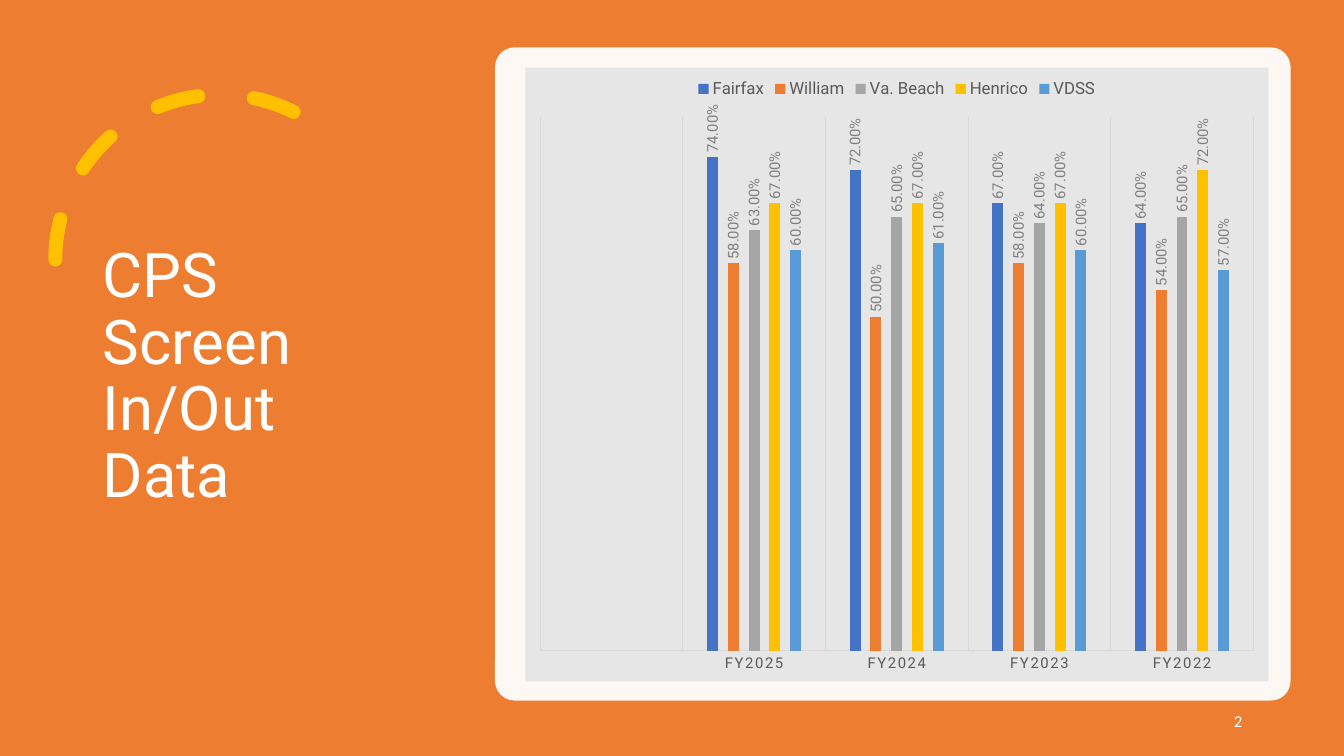
from dataclasses import dataclass

from lxml import etree
from pptx import Presentation
from pptx.chart.chart import Chart
from pptx.chart.data import CategoryChartData
from pptx.dml.color import RGBColor
from pptx.enum.chart import XL_CHART_TYPE, XL_LABEL_POSITION, XL_LEGEND_POSITION, XL_TICK_MARK
from pptx.enum.dml import MSO_LINE
from pptx.enum.shapes import MSO_SHAPE
from pptx.enum.text import MSO_ANCHOR, PP_ALIGN
from pptx.oxml import parse_xml
from pptx.oxml.ns import nsdecls, qn
from pptx.shapes.autoshape import Shape
from pptx.slide import Slide
from pptx.util import Inches, Pt

CLUSTERED = XL_CHART_TYPE.COLUMN_CLUSTERED
OUTSIDE_END = XL_LABEL_POSITION.OUTSIDE_END
LEGEND_TOP = XL_LEGEND_POSITION.TOP
NO_TICK = XL_TICK_MARK.NONE
DASH = MSO_LINE.DASH
RECTANGLE = MSO_SHAPE.RECTANGLE
ROUNDED = MSO_SHAPE.ROUNDED_RECTANGLE
ARC = MSO_SHAPE.ARC
MIDDLE = MSO_ANCHOR.MIDDLE
LEFT = PP_ALIGN.LEFT
RIGHT = PP_ALIGN.RIGHT

COLORS = {
    "orange": "ED7D31", "gold": "FFC000", "white": "FFFFFF", "blue": "4472C4",
    "gray": "A5A5A5", "sky": "5B9BD5", "panel": "E7E6E6", "grid": "D9D9D9",
    "axis_text": "595959", "label_text": "808080", "black": "000000",
}
FONT = "Roboto"
PERCENT = "0.00%"
YEARS = ["", "FY2025", "FY2024", "FY2023", "FY2022"]


@dataclass(frozen=True)
class Box:
    left: float
    top: float
    width: float
    height: float

    def lengths(self) -> list[int]:
        return [Inches(side) for side in (self.left, self.top, self.width, self.height)]


@dataclass(frozen=True)
class Agency:
    name: str
    color: str
    rates: list[float]


@dataclass(frozen=True)
class Caption:
    text: str
    box: Box
    size: float
    font: str
    alignment: PP_ALIGN
    line_spacing: float


AGENCIES = [
    Agency("Fairfax", "blue", [0.74, 0.72, 0.67, 0.64]),
    Agency("William", "orange", [0.58, 0.50, 0.58, 0.54]),
    Agency("Va. Beach", "gray", [0.63, 0.65, 0.64, 0.65]),
    Agency("Henrico", "gold", [0.67, 0.67, 0.67, 0.72]),
    Agency("VDSS", "sky", [0.60, 0.61, 0.60, 0.57]),
]
CAPTIONS = [
    Caption("CPS Screen In/Out Data", Box(0.92, 0.7, 3.23, 6.09), 44, FONT, LEFT, 0.9),
    Caption("2", Box(9.42, 6.95, 3, 0.4), 12, "Calibri", RIGHT, 1.0),
]


def rgb(name: str) -> RGBColor:
    return RGBColor.from_string(COLORS[name])


def style_font(font, size: float, color: str, name: str = FONT) -> None:
    font.size = Pt(size)
    font.name = name
    font.color.rgb = rgb(color)


def add_panel(slide: Slide, kind: MSO_SHAPE, box: Box, color: str) -> Shape:
    """Add a filled shape with no outline."""
    shape = slide.shapes.add_shape(kind, *box.lengths())
    shape.shadow.inherit = False
    shape.fill.solid()
    shape.fill.fore_color.rgb = rgb(color)
    shape.line.fill.background()
    return shape


def add_card(slide: Slide) -> None:
    card = add_panel(slide, ROUNDED, Box(4.91, 0.47, 7.89, 6.48), "white")
    card.adjustments[0] = 0.03
    fill_color = card.element.spPr.find(f"{qn('a:solidFill')}/{qn('a:srgbClr')}")
    etree.SubElement(fill_color, qn("a:alpha"), val="95000")


def add_dashed_arc(slide: Slide) -> None:
    arc = slide.shapes.add_shape(ARC, *Box(0.55, 0.94, 3.27, 3.27).lengths())
    arc.shadow.inherit = False
    arc.adjustments[0] = 146.13
    arc.adjustments[1] = 0
    arc.fill.background()
    arc.line.color.rgb = rgb("gold")
    arc.line.width = Pt(10)
    arc.line.dash_style = DASH
    arc.element.spPr.find(qn("a:ln")).set("cap", "rnd")
    arc.element.spPr.find(qn("a:xfrm")).set("flipH", "1")


def add_caption(slide: Slide, caption: Caption) -> None:
    frame = slide.shapes.add_textbox(*caption.box.lengths()).text_frame
    frame.word_wrap = True
    frame.vertical_anchor = MIDDLE
    paragraph = frame.paragraphs[0]
    paragraph.text = caption.text
    paragraph.alignment = caption.alignment
    paragraph.line_spacing = caption.line_spacing
    style_font(paragraph.font, caption.size, "white", caption.font)


def style_axes(chart: Chart) -> None:
    years = chart.category_axis
    years.major_tick_mark = years.minor_tick_mark = NO_TICK
    years.has_major_gridlines = True
    for line in (years.format.line, years.major_gridlines.format.line):
        line.color.rgb = rgb("grid")
        line.width = Pt(0.75)
    style_font(years.tick_labels.font, 10.6, "axis_text")
    for run_style in chart.element.xpath(".//c:catAx/c:txPr//a:defRPr"):
        run_style.set("spc", "120")

    rates = chart.value_axis
    rates.minimum_scale, rates.maximum_scale = 0, 0.8
    rates.has_major_gridlines = False
    rates.tick_labels.number_format = PERCENT
    rates.tick_labels.number_format_is_linked = False
    rates.visible = False


def style_series(chart: Chart) -> None:
    for series, agency in zip(chart.plots[0].series, AGENCIES):
        series.format.fill.solid()
        series.format.fill.fore_color.rgb = rgb(agency.color)
        labels = series.data_labels
        labels.show_value = True
        labels.position = OUTSIDE_END
        labels.number_format = PERCENT
        labels.number_format_is_linked = False
        style_font(labels.font, 10.6, "label_text")
    for body in chart.element.xpath(".//c:dLbls/c:txPr/a:bodyPr"):
        body.set("rot", "-5400000")
        body.set("vert", "horz")


def fill_chart_area(chart: Chart, color: str) -> None:
    area = parse_xml(
        f'<c:spPr {nsdecls("c", "a")}><a:solidFill><a:srgbClr val="{COLORS[color]}"/>'
        "</a:solidFill><a:ln><a:noFill/></a:ln></c:spPr>"
    )
    chart.element.find(qn("c:chart")).addnext(area)


def place_plot(chart: Chart, x: float, y: float, w: float, h: float) -> None:
    """Fix the inner plot area, in fractions of the chart."""
    plot_area = chart.element.xpath("./c:chart/c:plotArea")[0]
    for automatic in plot_area.findall(qn("c:layout")):
        plot_area.remove(automatic)
    settings = {"layoutTarget": "inner", "xMode": "edge", "yMode": "edge",
                "x": x, "y": y, "w": w, "h": h}
    layout = etree.Element(qn("c:layout"))
    manual = etree.SubElement(layout, qn("c:manualLayout"))
    for tag, value in settings.items():
        etree.SubElement(manual, qn(f"c:{tag}"), val=str(value))
    plot_area.insert(0, layout)


def add_rate_chart(slide: Slide) -> None:
    data = CategoryChartData(number_format=PERCENT)
    data.categories = YEARS
    for agency in AGENCIES:
        data.add_series(agency.name, [None, *agency.rates])
    box = Box(5.21, 0.67, 7.37, 6.09)
    chart = slide.shapes.add_chart(CLUSTERED, *box.lengths(), data).chart
    style_font(chart.font, 10, "black")
    chart.has_title = False
    chart.has_legend = True
    chart.legend.position = LEGEND_TOP
    chart.legend.include_in_layout = False
    style_font(chart.legend.font, 12, "axis_text")
    plot = chart.plots[0]
    plot.vary_by_categories = False
    plot.gap_width, plot.overlap = 444, -90
    style_axes(chart)
    style_series(chart)
    fill_chart_area(chart, "panel")
    place_plot(chart, 0.02, 0.08, 0.96, 0.87)


def main() -> None:
    presentation = Presentation()
    presentation.slide_width, presentation.slide_height = Inches(13.33), Inches(7.5)
    slide = presentation.slides.add_slide(presentation.slide_layouts[6])
    add_panel(slide, RECTANGLE, Box(0, 0, 13.33, 7.5), "orange")
    add_dashed_arc(slide)
    add_card(slide)
    for caption in CAPTIONS:
        add_caption(slide, caption)
    add_rate_chart(slide)
    presentation.save("out.pptx")


if __name__ == "__main__":
    main()
